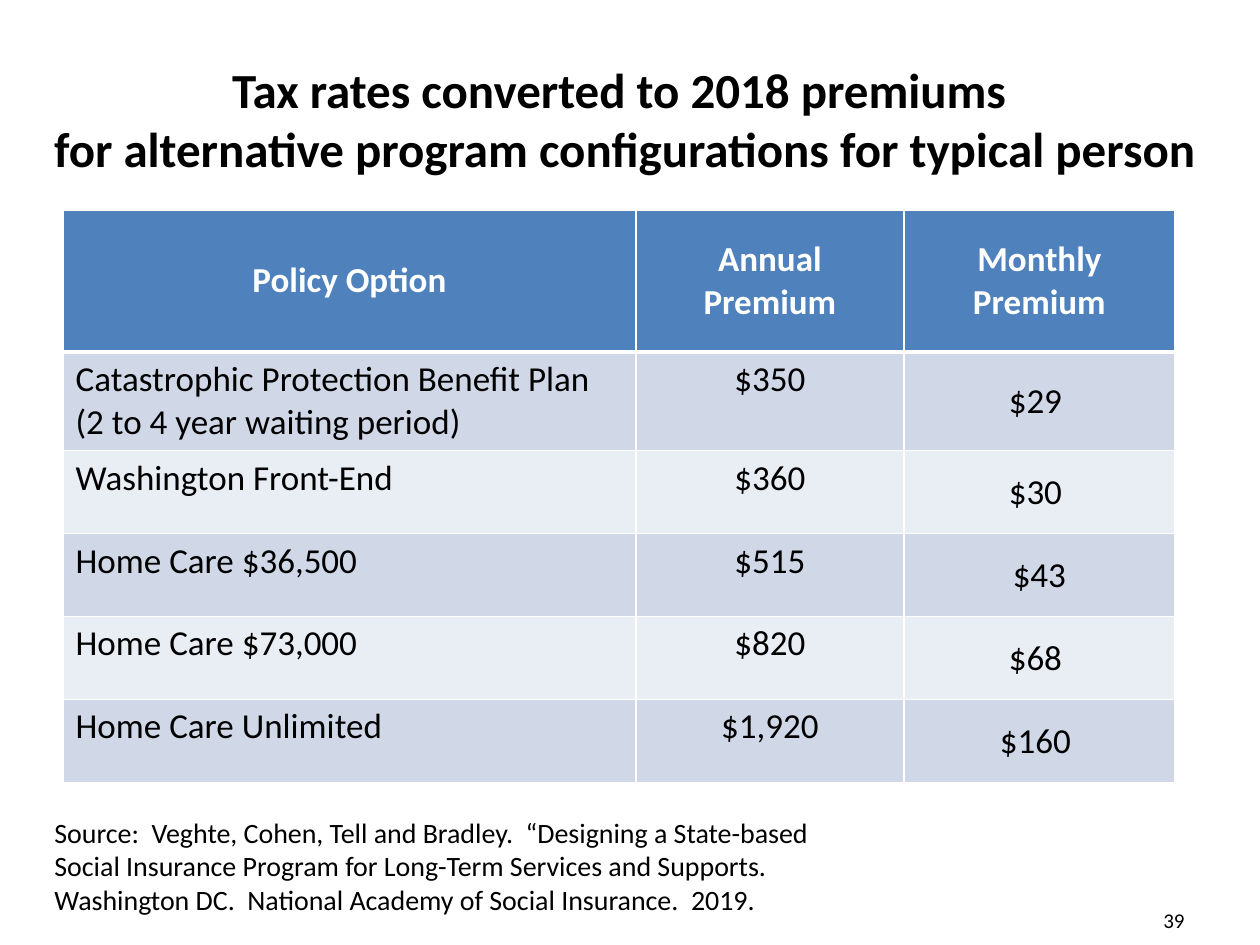
from lxml.etree import SubElement
from pptx import Presentation
from pptx.dml.color import RGBColor as RGB
from pptx.enum.text import MSO_ANCHOR as Anchor, MSO_AUTO_SIZE as Fit, PP_ALIGN as Align
from pptx.oxml.ns import qn
from pptx.util import Emu, Pt

BLACK = RGB(0, 0, 0)
WHITE = RGB(255, 255, 255)
BLUE = RGB(0x4F, 0x81, 0xBD)
BANDS = RGB(0xD0, 0xD8, 0xE8), RGB(0xE9, 0xED, 0xF4)
FONT = "Calibri"

COLS = 573, 268, 271
ROWS = 142, 98, 83, 83, 83, 83
HEAD = "Policy Option", "Annual Premium", "Monthly Premium"
PLANS = [
    ("Catastrophic Protection Benefit Plan (2 to 4 year waiting period)", "$350", "$29 "),
    ("Washington Front-End", "$360", "$30 "),
    ("Home Care $36,500", "$515", "$43"),
    ("Home Care $73,000", "$820", "$68 "),
    ("Home Care Unlimited", "$1,920", "$160 "),
]


def px(n):
    return Emu(round(n * 914400 / 126))


def add_run(para, text, size, color=BLACK, bold=False):
    run = para.add_run()
    run.text = text
    font = run.font
    font.name, font.size, font.bold = FONT, Pt(size), bold
    font.color.rgb = color


def add_title(slide, box, lines):
    title = slide.shapes.title
    title.left, title.top, title.width, title.height = map(px, box)
    frame = title.text_frame
    frame.auto_size = Fit.NONE
    frame.vertical_anchor = Anchor.MIDDLE
    para = frame.paragraphs[0]
    para.alignment = Align.CENTER
    for i, line in enumerate(lines):
        if i:
            para.add_line_break()
        add_run(para, line, 28, bold=True)


def add_text(slide, box, text, size, align=Align.LEFT, anchor=Anchor.TOP):
    frame = slide.shapes.add_textbox(*map(px, box)).text_frame
    frame.word_wrap = True
    frame.vertical_anchor = anchor
    para = frame.paragraphs[0]
    para.alignment = align
    add_run(para, text, size)


def add_edges(cell, top, bottom):
    """Draw white cell borders; top and bottom are widths in points."""
    props = cell._tc.get_or_add_tcPr()
    for side, width in zip("LRTB", (1, 1, top, bottom)):
        line = SubElement(props, qn(f"a:ln{side}"), w=str(Pt(width)))
        fill = SubElement(line, qn("a:solidFill"))
        SubElement(fill, qn("a:srgbClr"), val=str(WHITE))


def fill_cell(cell, text, row, col):
    head = row == 0
    add_edges(cell, 3 if row == 1 else 1, 3 if head else 1)
    cell.fill.solid()
    cell.fill.fore_color.rgb = BLUE if head else BANDS[(row - 1) % 2]
    cell.vertical_anchor = Anchor.MIDDLE if head or col == 2 else Anchor.TOP
    if col == 2 and not head:
        cell.margin_left = cell.margin_right = cell.margin_top = px(1)
        cell.margin_bottom = 0
    para = cell.text_frame.paragraphs[0]
    para.alignment = Align.CENTER if head or col else Align.LEFT
    add_run(para, text, 20, WHITE if head else BLACK, head)


def add_rates(slide, left, top):
    box = left, top, sum(COLS), sum(ROWS)
    table = slide.shapes.add_table(len(ROWS), len(COLS), *map(px, box)).table
    for col, width in zip(table.columns, COLS):
        col.width = px(width)
    for row, height in zip(table.rows, ROWS):
        row.height = px(height)
    for r, texts in enumerate([HEAD, *PLANS]):
        for c, text in enumerate(texts):
            fill_cell(table.cell(r, c), text, r, c)


def main():
    deck = Presentation()
    deck.slide_width, deck.slide_height = px(1260), px(945)
    slide = deck.slides.add_slide(deck.slide_layouts[5])
    add_title(slide, (21, 38, 1207, 161), [
        "Tax rates converted to 2018 premiums ",
        "for alternative program configurations for typical person",
    ])
    add_rates(slide, 63, 210)
    add_text(slide, (903, 895, 294, 50), "39", 12, Align.RIGHT, Anchor.MIDDLE)
    add_text(slide, (42, 809, 798, 115),
             "Source:  Veghte, Cohen, Tell and Bradley.  “Designing a State-based "
             "Social Insurance Program for Long-Term Services and Supports.  "
             "Washington DC.  National Academy of Social Insurance.  2019.", 16)
    deck.save("out.pptx")


if __name__ == "__main__":
    main()
